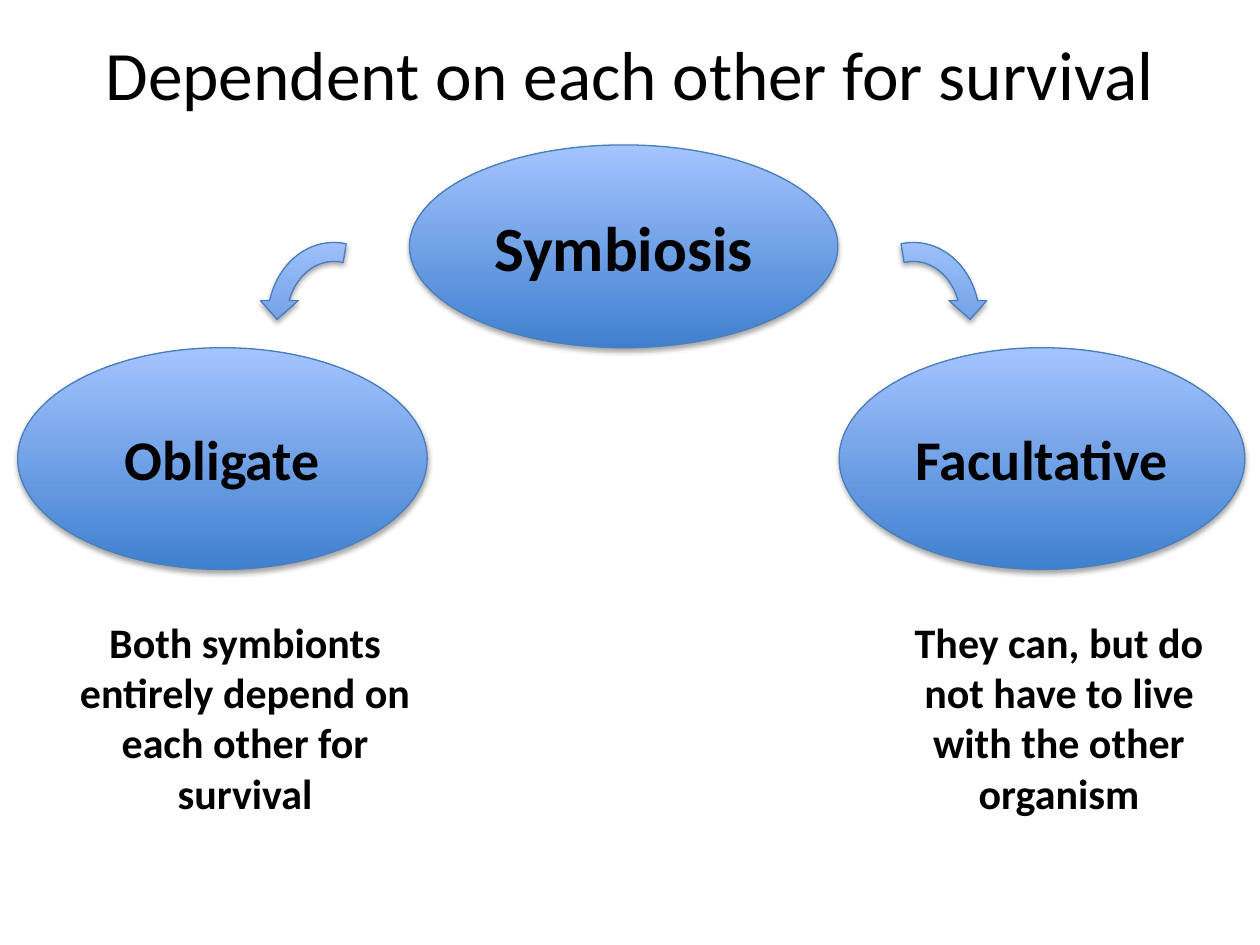
from lxml import etree
from pptx import Presentation
from pptx.dml.color import RGBColor
from pptx.enum.shapes import MSO_SHAPE
from pptx.enum.text import MSO_ANCHOR, MSO_AUTO_SIZE, PP_ALIGN
from pptx.oxml.ns import qn
from pptx.util import Inches, Pt

OVAL, CURVED_ARROW = MSO_SHAPE.OVAL, MSO_SHAPE.CIRCULAR_ARROW
TOP, MIDDLE = MSO_ANCHOR.TOP, MSO_ANCHOR.MIDDLE
CENTER = PP_ALIGN.CENTER
GROW = MSO_AUTO_SIZE.SHAPE_TO_FIT_TEXT

BLACK = RGBColor(0x00, 0x00, 0x00)
DARK_BLUE = RGBColor(0x3F, 0x80, 0xCE)
LIGHT_BLUE = RGBColor(0xA4, 0xC4, 0xFF)
OUTLINE_BLUE = RGBColor(0x4B, 0x7E, 0xBC)

FONT = "Calibri"
ARROW_ADJUSTMENTS = (0.125, 11.423, 204.577, 156.404, 0.125)

# Layout in inches
ROOT_LEFT, ROOT_TOP, ROOT_WIDTH, ROOT_HEIGHT = 3.25, 1.15, 3.4, 1.61
TYPE_TOP, TYPE_HEIGHT = ROOT_TOP + ROOT_HEIGHT, 1.76
NOTE_TOP, NOTE_HEIGHT = 4.84, 1.72
ARROW_TOP, ARROW_WIDTH, ARROW_HEIGHT = 1.85, 1.2, 1.37


def write_text(shape, text, size, bold=True, anchor=MIDDLE):
    frame = shape.text_frame
    frame.word_wrap = True
    frame.vertical_anchor = anchor
    paragraph = frame.paragraphs[0]
    paragraph.alignment = CENTER
    run = paragraph.add_run()
    run.text = text
    run.font.name = FONT
    run.font.size = Pt(size)
    run.font.bold = bold
    run.font.color.rgb = BLACK


def add_text_box(slide, box, text, size, **text_format):
    shape = slide.shapes.add_textbox(*map(Inches, box))
    write_text(shape, text, size, **text_format)
    return shape


def add_shadow(shape):
    shape.shadow.inherit = False
    effects = shape._element.spPr.find(qn("a:effectLst"))
    shadow = etree.SubElement(
        effects, qn("a:outerShdw"), blurRad=str(Pt(3.1)), dist=str(Pt(1.8)),
        dir="5400000", rotWithShape="0")
    color = etree.SubElement(shadow, qn("a:srgbClr"), val=str(BLACK))
    etree.SubElement(color, qn("a:alpha"), val="35000")


def add_blue_shape(slide, kind, box):
    shape = slide.shapes.add_shape(kind, *map(Inches, box))
    shape.fill.gradient()
    shape.fill.gradient_angle = 90
    for stop, position, color in zip(
            shape.fill.gradient_stops, (0, 1), (DARK_BLUE, LIGHT_BLUE)):
        stop.position = position
        stop.color.rgb = color
    shape.line.color.rgb = OUTLINE_BLUE
    shape.line.width = Pt(0.75)
    add_shadow(shape)
    return shape


def add_oval(slide, box, text, size):
    write_text(add_blue_shape(slide, OVAL, box), text, size)


def add_note(slide, box, text):
    note = add_text_box(slide, box, text, 24, anchor=TOP)
    note.text_frame.auto_size = GROW


def add_arrow(slide, left, flipped):
    box = (left, ARROW_TOP, ARROW_WIDTH, ARROW_HEIGHT)
    arrow = add_blue_shape(slide, CURVED_ARROW, box)
    for index, value in enumerate(ARROW_ADJUSTMENTS):
        arrow.adjustments[index] = value
    if flipped:
        arrow._element.spPr.get_or_add_xfrm().set("flipH", "1")


def main():
    presentation = Presentation()
    presentation.slide_width = Inches(10)
    presentation.slide_height = Inches(7.5)
    slide = presentation.slides.add_slide(presentation.slide_layouts[6])

    # Title
    add_text_box(slide, (0.5, 0, 9, 1.15),
                 "Dependent on each other for survival", 39.6, bold=False)

    # Symbiosis and its two types
    add_oval(slide, (ROOT_LEFT, ROOT_TOP, ROOT_WIDTH, ROOT_HEIGHT),
             "Symbiosis", 36)
    for left, width, text in ((0.14, 3.25, "Obligate"),
                              (6.66, 3.22, "Facultative")):
        add_oval(slide, (left, TYPE_TOP, width, TYPE_HEIGHT), text, 32)

    # Explanations
    for left, width, text in (
            (0.5, 2.89,
             "Both symbionts entirely depend on each other for survival"),
            (6.94, 2.93,
             "They can, but do not have to live with the other organism")):
        add_note(slide, (left, NOTE_TOP, width, NOTE_HEIGHT), text)

    # Arrows on both sides of the top oval
    add_arrow(slide, ROOT_LEFT - ARROW_WIDTH, flipped=True)
    add_arrow(slide, ROOT_LEFT + ROOT_WIDTH, flipped=False)

    presentation.save("out.pptx")


if __name__ == "__main__":
    main()
